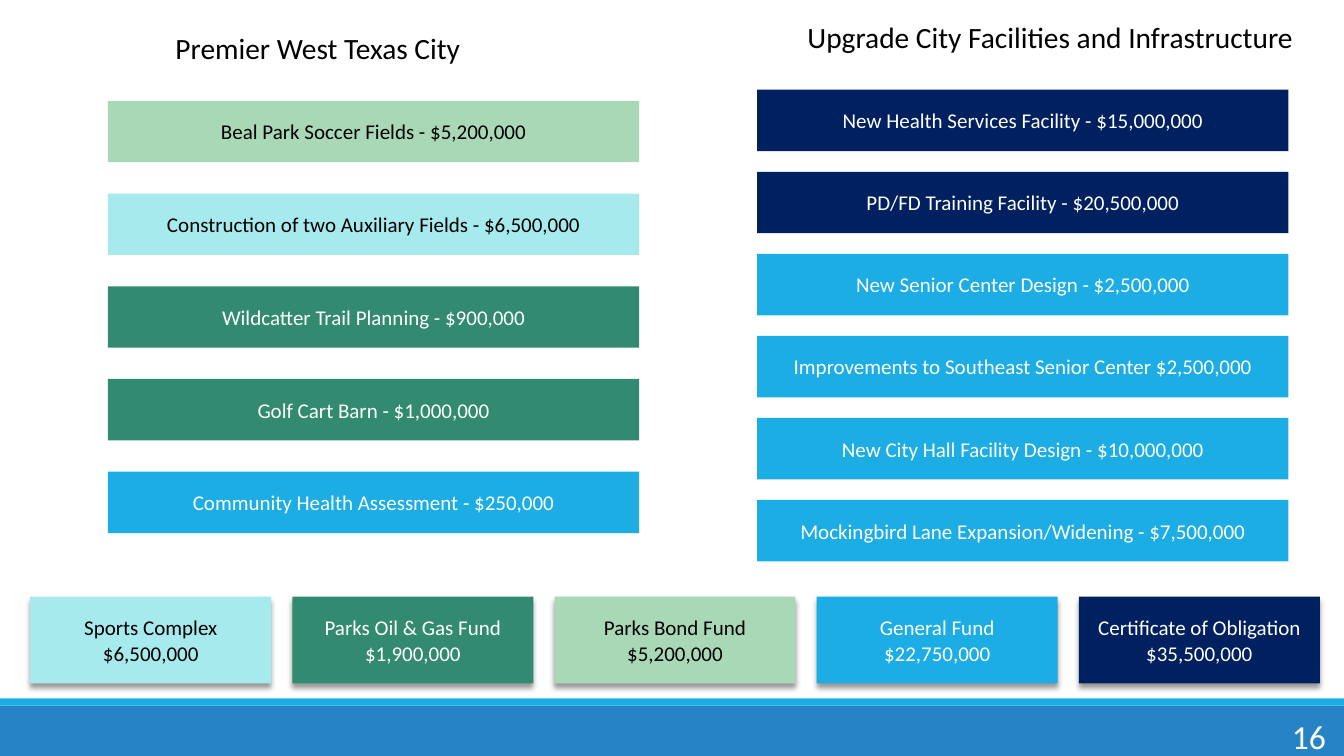
from lxml import etree
from pptx import Presentation
from pptx.dml.color import RGBColor
from pptx.enum.shapes import MSO_SHAPE as Shape
from pptx.enum.text import MSO_ANCHOR as Anchor, MSO_AUTO_SIZE as AutoSize, PP_ALIGN as Align
from pptx.oxml.ns import qn
from pptx.util import Inches, Pt

WHITE = RGBColor(0xFF, 0xFF, 0xFF)
BLACK = RGBColor(0x00, 0x00, 0x00)
NAVY = RGBColor(0x00, 0x20, 0x60)
SKY = RGBColor(0x1C, 0xAD, 0xE4)
BLUE = RGBColor(0x26, 0x83, 0xC6)
AQUA = RGBColor(0xA6, 0xEA, 0xEE)
MINT = RGBColor(0xA9, 0xD8, 0xB7)
GREEN = RGBColor(0x32, 0x8B, 0x71)
PALE = (AQUA, MINT)

FONT = "Calibri"
PAGE = "16"
CITY_HEADING = "Premier West Texas City"
FACILITIES_HEADING = "Upgrade City Facilities and Infrastructure"

CITY_PROJECTS = [
    ("Beal Park Soccer Fields - $5,200,000", MINT),
    ("Construction of two Auxiliary Fields - $6,500,000", AQUA),
    ("Wildcatter Trail Planning - $900,000", GREEN),
    ("Golf Cart Barn - $1,000,000", GREEN),
    ("Community Health Assessment - $250,000", SKY),
]
FACILITY_PROJECTS = [
    ("New Health Services Facility - $15,000,000", NAVY),
    ("PD/FD Training Facility - $20,500,000", NAVY),
    ("New Senior Center Design - $2,500,000", SKY),
    ("Improvements to Southeast Senior Center $2,500,000", SKY),
    ("New City Hall Facility Design - $10,000,000", SKY),
    ("Mockingbird Lane Expansion/Widening - $7,500,000", SKY),
]
FUNDS = [
    ("Sports Complex\n$6,500,000", AQUA),
    ("Parks Oil & Gas Fund\n$1,900,000", GREEN),
    ("Parks Bond Fund\n$5,200,000", MINT),
    ("General Fund\n$22,750,000", SKY),
    ("Certificate of Obligation\n$35,500,000", NAVY),
]
COLUMNS = [
    (CITY_PROJECTS, 1.07, 1.0, 0.92),
    (FACILITY_PROJECTS, 7.51, 0.89, 0.814),
]

deck = Presentation()
deck.slide_width, deck.slide_height = Inches(13.33), Inches(7.5)
slide = deck.slides.add_slide(deck.slide_layouts[5])


def write(holder, text, size=15, color=BLACK, align=Align.CENTER, anchor=Anchor.MIDDLE):
    frame = holder.text_frame
    frame.text = text
    frame.word_wrap = True
    frame.auto_size = AutoSize.NONE
    frame.vertical_anchor = anchor
    for line in frame.paragraphs:
        line.alignment = align
        line.font.name = FONT
        line.font.size = Pt(size)
        line.font.color.rgb = color


def add_block(left, top, width, height, fill):
    block = slide.shapes.add_shape(
        Shape.RECTANGLE, Inches(left), Inches(top), Inches(width), Inches(height))
    block.shadow.inherit = False
    block.fill.solid()
    block.fill.fore_color.rgb = fill
    block.line.fill.background()
    return block


def add_label(left, top, width, height, text, fill):
    block = add_block(left, top, width, height, fill)
    write(block, text, color=BLACK if fill in PALE else WHITE)
    return block


def add_shadow(block):
    effects = block._element.spPr.find(qn("a:effectLst"))
    shadow = etree.SubElement(
        effects, qn("a:outerShdw"), blurRad=str(Pt(4)), dist=str(Pt(3)),
        dir="5400000", algn="t", rotWithShape="0")
    black = etree.SubElement(shadow, qn("a:srgbClr"), val="000000")
    etree.SubElement(black, qn("a:alpha"), val="40000")


add_block(0, 7, 13.33, 0.5, BLUE)
add_block(0, 6.93, 13.33, 0.07, SKY)

city_title = slide.shapes.title
city_title.left, city_title.top = Inches(1.64), Inches(0.25)
city_title.width, city_title.height = Inches(4.87), Inches(0.45)
write(city_title, CITY_HEADING, size=21, align=Align.LEFT, anchor=Anchor.TOP)

facilities_title = slide.shapes.add_textbox(
    Inches(7.91), Inches(0.14), Inches(5.35), Inches(0.45))
write(facilities_title, FACILITIES_HEADING, size=21, align=Align.LEFT, anchor=Anchor.TOP)

for projects, left, top, step in COLUMNS:
    for row, (project, fill) in enumerate(projects):
        add_label(left, top + row * step, 5.27, 0.61, project, fill)

for column, (fund, fill) in enumerate(FUNDS):
    add_shadow(add_label(0.3 + column * 2.6, 5.92, 2.39, 0.86, fund, fill))

page_number = slide.shapes.add_textbox(
    Inches(11.82), Inches(7.1), Inches(1.43), Inches(0.4))
write(page_number, PAGE, size=24, color=WHITE, align=Align.RIGHT)

deck.save("out.pptx")
